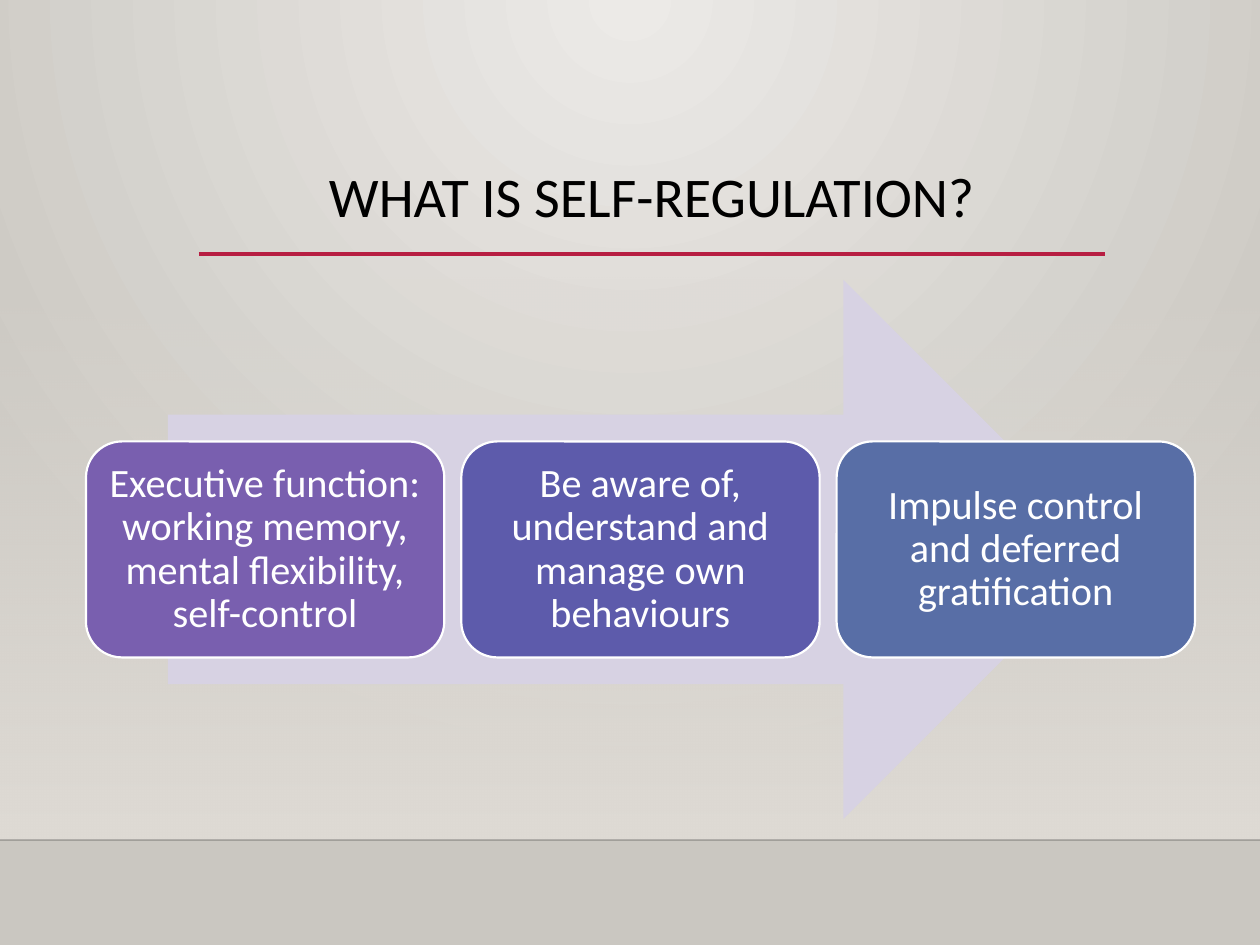
from lxml.etree import SubElement as Sub
from pptx import Presentation
from pptx.dml.color import RGBColor as Rgb
from pptx.enum.shapes import MSO_CONNECTOR as Conn, MSO_SHAPE as Kind
from pptx.enum.text import MSO_ANCHOR as Anchor, PP_ALIGN as Align
from pptx.oxml.ns import qn
from pptx.util import Pt

WIDE, HIGH = 1260, 945
FONT = "Calibri"
HUES = {
    "light": "ECEAE7", "dark": "CAC7C1", "wall": "DFDBD5",
    "edge": "000001", "rule": "B71E42", "ink": "000000",
    "arrow": "D7D2E3", "white": "FFFFFF",
    "plum": "795FAF", "indigo": "5D5BAB", "steel": "586EA6",
}
CARDS = [
    ("plum", "Executive function: working memory, mental flexibility, self-control"),
    ("indigo", "Be aware of, understand and manage own behaviours"),
    ("steel", "Impulse control and deferred gratification"),
]


def px(num):
    return round(num * 914400 / 126)


def hue(name):
    return Rgb.from_string(HUES[name])


def blend(fill, first, last):
    fill.gradient()
    for stop, name in zip(fill.gradient_stops, (first, last)):
        stop.color.rgb = hue(name)


def fade(root, cent):
    """Set the opacity of the first colour found under root."""
    Sub(root.find(".//" + qn("a:srgbClr")), qn("a:alpha"), val=str(cent * 1000))


def shape(slide, kind, box):
    part = slide.shapes.add_shape(kind, *map(px, box))
    part.shadow.inherit = False
    part.line.fill.background()
    return part


def rule(slide, left, top, width, name, size):
    line = slide.shapes.add_connector(
        Conn.STRAIGHT, px(left), px(top), px(left + width), px(top))
    line.line.color.rgb = hue(name)
    line.line.width = Pt(size)
    Sub(line._element.spPr, qn("a:effectLst"))
    return line


def write(part, text, size, name, anchor, pad):
    frame = part.text_frame
    frame.word_wrap = True
    frame.vertical_anchor = anchor
    frame.margin_left = frame.margin_right = px(pad)
    frame.margin_top = frame.margin_bottom = px(pad)
    para = frame.paragraphs[0]
    para.alignment = Align.CENTER
    para.line_spacing = 0.9
    run = para.add_run()
    run.text = text
    run.font.name = FONT
    run.font.size = Pt(size)
    run.font.color.rgb = hue(name)


def scene(slide, floor):
    # Radial glow from the top centre
    blend(slide.background.fill, "light", "dark")
    grad = slide.element.find(".//" + qn("a:gradFill"))
    grad.remove(grad.find(qn("a:lin")))
    glow = Sub(grad, qn("a:path"), {"path": "circle"})
    Sub(glow, qn("a:fillToRect"), l="43000", t="0", r="43000", b="100000")
    # Wall that fades in down to the floor line
    wall = shape(slide, Kind.RECTANGLE, (0, 277, WIDE, floor - 277))
    blend(wall.fill, "wall", "wall")
    wall.fill.gradient_angle = 270
    fade(wall._element.spPr, 0)
    edge = rule(slide, 0, floor, WIDE, "edge", 1)
    fade(edge._element.spPr, 20)


def head(slide, box):
    left, top, width, height = box
    rule(slide, left, top + height + 18, width, "rule", 2.5)
    part = slide.shapes.add_textbox(*map(px, box))
    write(part, "WHAT IS SELF-REGULATION?", 32, "ink", Anchor.BOTTOM, 6)


def flow(slide, box):
    left, top, width, height = box
    # Arrow behind the cards
    span = 945
    arrow = shape(slide, Kind.RIGHT_ARROW,
                  (left + (width - span) / 2, top, span, height))
    arrow.fill.solid()
    arrow.fill.fore_color.rgb = hue("arrow")
    # Row of equal cards, centred on the arrow
    gap, tall = 17, 216
    wide = (width - gap * (len(CARDS) - 1)) / len(CARDS)
    for num, (name, text) in enumerate(CARDS):
        card = shape(slide, Kind.ROUNDED_RECTANGLE,
                     (left + num * (wide + gap), top + (height - tall) / 2, wide, tall))
        card.fill.solid()
        card.fill.fore_color.rgb = hue(name)
        card.line.color.rgb = hue("white")
        card.line.width = Pt(1.25)
        write(card, text, 23, "white", Anchor.MIDDLE, 11)


def main():
    deck = Presentation()
    deck.slide_width, deck.slide_height = px(WIDE), px(HIGH)
    slide = deck.slides.add_slide(deck.slide_layouts[6])
    scene(slide, 840)
    head(slide, (199, 40, 906, 196))
    flow(slide, (86, 280, 1109, 539))
    deck.save("out.pptx")


if __name__ == "__main__":
    main()
